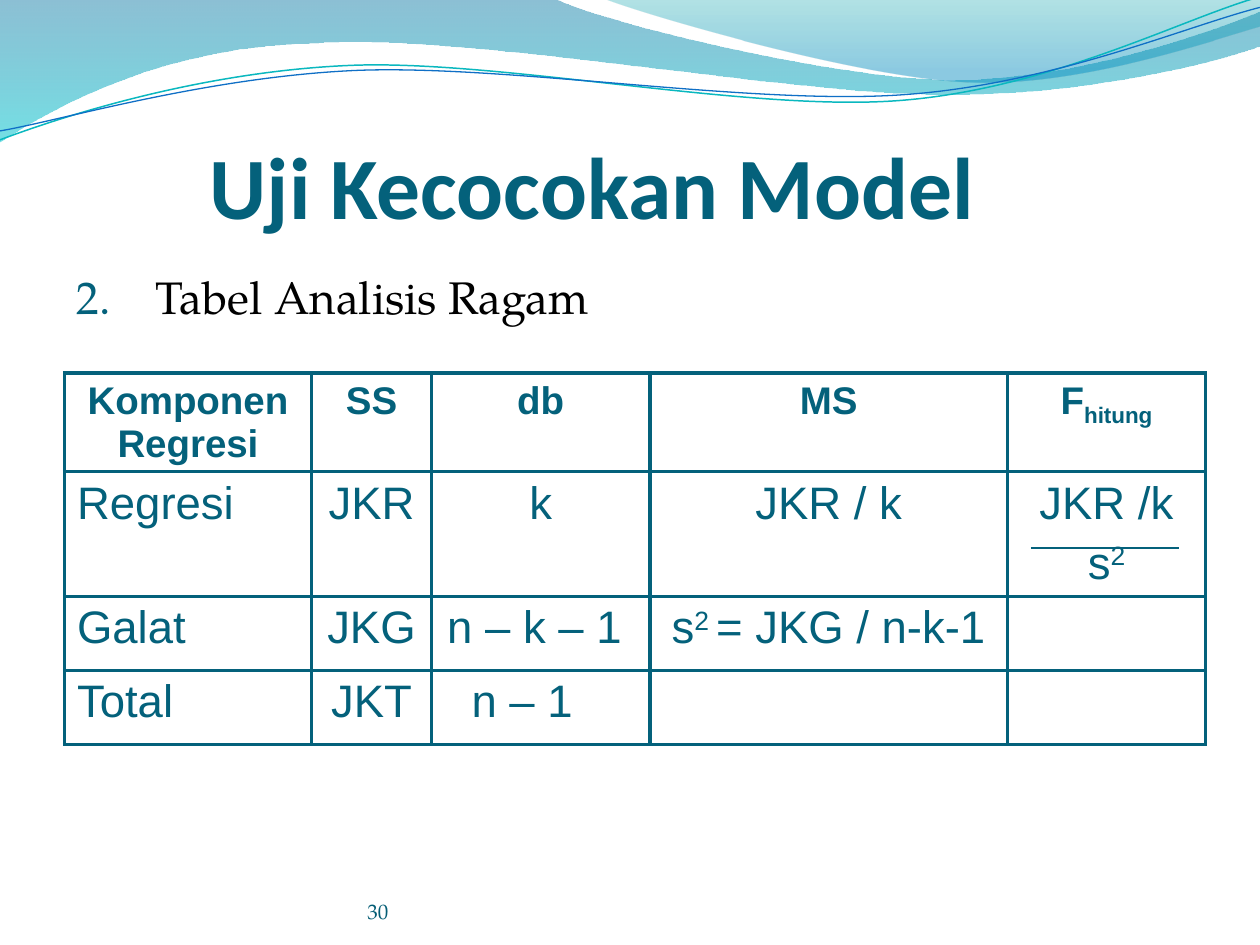
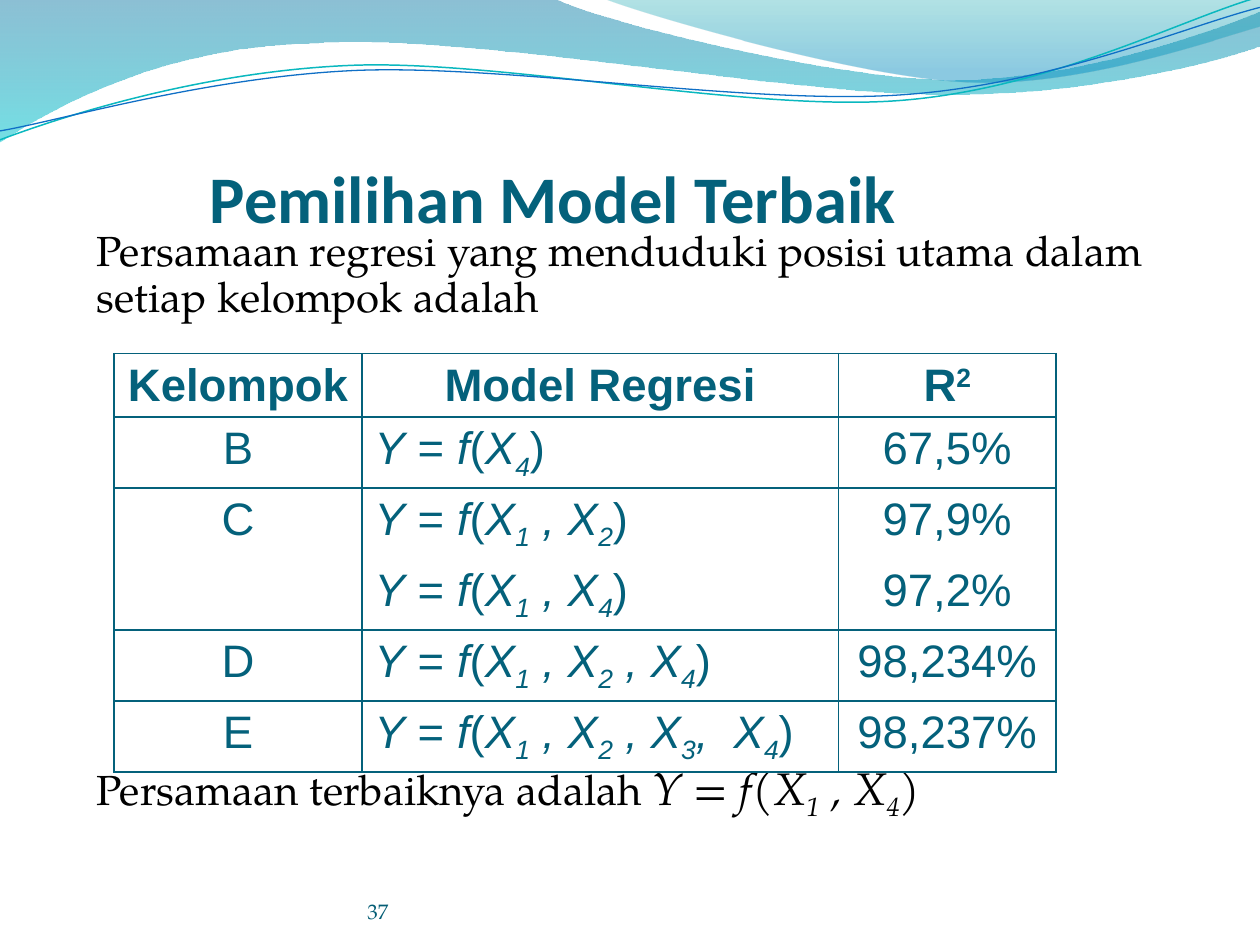
from lxml import etree
from pptx import Presentation, util as u
from pptx.dml.color import RGBColor
from pptx.enum import shapes, text
from pptx.oxml.ns import qn

Cm, Pt = u.Cm, u.Pt

# Colours and fonts
DEEP_TEAL = RGBColor(0x04, 0x61, 0x7B)
NUMBER_TEAL = RGBColor(0x04, 0x5D, 0x75)
BLACK = RGBColor(0, 0, 0)
TEAL_LINE = RGBColor(0x0A, 0xB8, 0xBF)
BLUE_LINE = RGBColor(0x0F, 0x6F, 0xC6)
HEADING_FONT, BODY_FONT, TABLE_FONT = "Calibri", "TeX Gyre Pagella", "Arial"
CENTER, LEFT, RIGHT = text.PP_ALIGN.CENTER, text.PP_ALIGN.LEFT, text.PP_ALIGN.RIGHT

# Run formats
TITLE = {"name": HEADING_FONT, "bold": True, "color": DEEP_TEAL}
BODY = {"name": BODY_FONT, "size": Pt(26), "color": BLACK}
NUMBER = {"name": BODY_FONT, "size": Pt(12), "color": NUMBER_TEAL}
CELL = {"name": TABLE_FONT, "size": Pt(26), "color": DEEP_TEAL}
ITALIC = {"italic": True}
SUB, SUPER = {"baseline": -25000}, {"baseline": 30000}

# Wave outlines in cm: a start point, then lines (2 values) or curves (6 values)
BROAD_WAVE = [
    (0, 0), (11.18, -0.03), (12.09, 0.43, 16.87, 1.6, 19.25, 1.6),
    (21.67, 1.6, 24.33, 0.66, 25.4, 0.23), (25.43, 0.91),
    (24.97, 1.12, 22.1, 1.93, 18.95, 1.9), (15.8, 1.9, 9.7, 0.71, 6.53, 0.86),
    (3.28, 0.91, 1.17, 2.11, -0.03, 2.87), (0, 0)]
RIGHT_WAVE = [
    (12.17, -0.03), (12.93, 0.28, 17.32, 1.57, 19.53, 1.65),
    (21.74, 1.75, 24.41, 0.81, 25.4, 0.53), (25.4, 0), (12.17, -0.03)]
TEAL_CURVE = [
    (0, 2.82), (1.22, 2.36, 4.01, 1.45, 7.04, 1.32),
    (10.03, 1.19, 15.06, 2.26, 18.11, 2.03), (21.16, 1.8, 23.83, 0.38, 25.35, -0.05)]
BLUE_CURVE = [
    (0, 2.64), (1.19, 2.44, 4.17, 1.55, 7.19, 1.42),
    (10.24, 1.3, 15.16, 2.13, 18.21, 1.91), (21.23, 1.7, 23.9, 0.53, 25.4, 0.15)]
# Gradient stops: position, colour, opacity in percent
BROAD_STOPS = [(0, RGBColor(0, 0x74, 0xA1), 45), (1, RGBColor(0, 0xC6, 0xCF), 55)]
RIGHT_STOPS = [(0, RGBColor(0, 0xA1, 0xA9), 30), (0.8, RGBColor(0, 0x8B, 0xBF), 45)]


def formula(*indices, last_comma=" , "):
    """Runs of Y = f(X...) with the given subscripts."""
    runs = [("Y", ITALIC), (" = ", {}), ("f", ITALIC), ("(", {})]
    for place, index in enumerate(indices):
        comma = last_comma if place == len(indices) - 1 else " , "
        runs += [((comma if place else "") + "X", ITALIC), (index, {**ITALIC, **SUB})]
    return runs + [(")", {})]


class Deck:
    def __init__(self):
        self.prs = Presentation()
        self.prs.slide_width, self.prs.slide_height = Cm(25.4), Cm(19.05)
        self.slide = None

    def new_slide(self, title, title_size, number):
        self.slide = self.prs.slides.add_slide(self.prs.slide_layouts[6])
        # Wave band
        self.wave(BROAD_WAVE, stops=BROAD_STOPS)
        self.wave(RIGHT_WAVE, stops=RIGHT_STOPS)
        self.wave(TEAL_CURVE, line=(TEAL_LINE, 0.85))
        self.wave(BLUE_CURVE, line=(BLUE_LINE, 0.75))
        # Page number and title
        bottom = {"vertical_anchor": text.MSO_ANCHOR.BOTTOM, "margin_left": 0,
                  "margin_right": 0, "margin_bottom": 0}
        number_frame = self.text_box((4.23, 17.35, 3.6, 1.27), {**bottom, "margin_top": 0})
        self.paragraph(number_frame.paragraphs[0], number, NUMBER, RIGHT)
        title_frame = self.text_box((4.23, 0.53, 19.48, 4.24), bottom)
        self.paragraph(title_frame.paragraphs[0], title, {**TITLE, "size": Pt(title_size)})

    def wave(self, outline, stops=None, line=None):
        (left, top), *segments = outline
        points = [(Cm(x), Cm(y)) for segment in segments
                  for x, y in zip(segment[::2], segment[1::2])]
        builder = self.slide.shapes.build_freeform(Cm(left), Cm(top))
        builder.add_line_segments(points, close=bool(stops))
        wave = builder.convert_to_shape()
        self.bend(wave, segments)
        wave.shadow.inherit = False
        if line:
            wave.fill.background()
            wave.line.color.rgb, wave.line.width = line[0], Pt(line[1])
            return
        wave.line.fill.background()
        wave.fill.gradient()
        wave.fill.gradient_angle = 270
        for stop, (position, color, _) in zip(wave.fill.gradient_stops, stops):
            stop.position, stop.color.rgb = position, color
        colors = list(wave._element.spPr.iter(qn("a:srgbClr")))
        for color, (_, _, opacity) in zip(colors, stops):
            etree.SubElement(color, qn("a:alpha"), val=str(opacity * 1000))

    def bend(self, wave, segments):
        """Join each three points of a curved segment into one cubic curve."""
        steps = iter(list(wave._element.spPr.iter(qn("a:lnTo"))))
        for segment in segments:
            parts = [next(steps) for _ in segment[::2]]
            if len(parts) == 3:
                curve = etree.Element(qn("a:cubicBezTo"))
                parts[0].addprevious(curve)
                for part in parts:
                    curve.append(part[0])
                    part.getparent().remove(part)

    def text_box(self, place, options=None):
        frame = self.slide.shapes.add_textbox(*map(Cm, place)).text_frame
        for key, value in {"word_wrap": True, **(options or {})}.items():
            setattr(frame, key, value)
        return frame

    def paragraph(self, para, content, style, align=LEFT, **spacing):
        for key, value in {"alignment": align, **spacing}.items():
            setattr(para, key, value)
        runs = [(content, {})] if isinstance(content, str) else content
        for words, extra in runs:
            run = para.add_run()
            run.text = words
            for key, value in {**style, **extra}.items():
                if key == "color":
                    run.font.color.rgb = value
                elif key == "baseline":
                    run._r.get_or_add_rPr().set("baseline", str(value))
                else:
                    setattr(run.font, key, value)

    def numbering(self, para, start, hanging):
        props = para._p.get_or_add_pPr()
        props.set("marL", str(hanging))
        props.set("indent", str(-hanging))
        bullet_color = etree.SubElement(props, qn("a:buClr"))
        etree.SubElement(bullet_color, qn("a:srgbClr"), val=str(DEEP_TEAL))
        etree.SubElement(props, qn("a:buAutoNum"), type="arabicPeriod", startAt=str(start))

    def table(self, corner, widths, heights, rows, border, left_column,
              header_size=26, joined_row=None):
        """Each cell holds a list of paragraphs; joined_row has no line below."""
        size = (sum(widths), sum(heights))
        grid = self.slide.shapes.add_table(
            len(rows), len(widths), *map(Cm, corner + size)).table
        grid.first_row = grid.horz_banding = False
        for column, width in zip(grid.columns, widths):
            column.width = Cm(width)
        for r, (row, height) in enumerate(zip(rows, heights)):
            grid.rows[r].height = Cm(height)
            style = CELL if r else {**CELL, "bold": True, "size": Pt(header_size)}
            open_side = {joined_row: "B"}.get(r, "T" if r - 1 == joined_row else "")
            for c, paragraphs in enumerate(row):
                cell = grid.cell(r, c)
                cell.margin_bottom = 0
                self.borders(cell, border, open_side)
                cell.fill.background()
                align = LEFT if r and c == left_column else CENTER
                for i, content in enumerate(paragraphs):
                    para = cell.text_frame.add_paragraph() if i else cell.text_frame.paragraphs[0]
                    self.paragraph(para, content, style, align, space_before=Pt(5.2 if i else 0))
        return grid

    def borders(self, cell, width, open_side):
        props = cell._tc.get_or_add_tcPr()
        for side in "LRTB":
            line = etree.SubElement(props, qn("a:ln" + side), w=str(Pt(width)))
            if side == open_side:
                etree.SubElement(line, qn("a:noFill"))
            else:
                fill = etree.SubElement(line, qn("a:solidFill"))
                etree.SubElement(fill, qn("a:srgbClr"), val=str(DEEP_TEAL))

    def rule(self, left, right, top):
        line = self.slide.shapes.add_connector(
            shapes.MSO_CONNECTOR.STRAIGHT, Cm(left), Cm(top), Cm(right), Cm(top))
        line.line.color.rgb, line.line.width = DEEP_TEAL, Pt(1.5)
        etree.SubElement(line._element.spPr, qn("a:effectLst"))


def model_fit(deck):
    deck.new_slide("Uji Kecocokan Model", 50, "30")
    heading = deck.text_box((1.3, 5.29, 21.79, 2.03)).paragraphs[0]
    deck.numbering(heading, 2, Cm(1.59))
    deck.paragraph(heading, "Tabel Analisis Ragam", BODY)

    # Analysis of variance
    s_squared = [("s", {}), ("2", SUPER)]
    error_mean = [("s", {}), ("2 ", SUPER), ("= JKG / n-k-1", {})]
    variance_rows = [
        [["Komponen Regresi"], ["SS"], ["db"], ["MS"], [[("F", {}), ("hitung", SUB)]]],
        [["Regresi"], ["JKR"], ["k"], ["JKR / k"], ["JKR /k", s_squared]],
        [["Galat"], ["JKG"], ["n – k – 1"], [error_mean], []],
        [["Total"], ["JKT"], ["n – 1"], [], []]]
    variance = deck.table((1.3, 7.52), (4.98, 2.42, 4.4, 7.21, 3.99),
                          (1.99, 2.5, 1.49, 1.5), variance_rows,
                          border=2.25, left_column=0, header_size=22)
    for row, margin in ((2, 0.5), (3, 1.0)):
        variance.cell(row, 2).margin_right = Cm(margin)
    deck.rule(20.78, 23.77, 11.05)


def best_model(deck):
    deck.new_slide("Pemilihan Model Terbaik", 38, "37")

    # Text above and below the table
    body = deck.text_box((1.7, 4.52, 21.62, 12.8))
    small = {"size": Pt(24)}
    deck.paragraph(
        body.paragraphs[0],
        "Persamaan regresi yang menduduki posisi utama dalam setiap kelompok adalah",
        {**BODY, **small}, line_spacing=0.9)
    deck.paragraph(
        body.add_paragraph(),
        [("Persamaan terbaiknya adalah ", small)] + formula("1", "4"),
        BODY, line_spacing=0.9, space_before=Pt(251))

    # Leading model of each group
    models = [
        (["B"], formula("4"), "67,5%"),
        (["C"], formula("1", "2"), "97,9%"),
        ([], formula("1", "4"), "97,2%"),
        (["D"], formula("1", "2", "4"), "98,234%"),
        (["E"], formula("1", "2", "3", "4", last_comma=",  "), "98,237%")]
    header = [["Kelompok"], ["Model Regresi"], [[("R", {}), ("2", SUPER)]]]
    model_rows = [header] + [[group, [model], [fit]] for group, model, fit in models]
    deck.table((2.3, 7.13), (5.0, 9.6, 4.39), [1.28] + [1.43] * len(models),
               model_rows, border=1, left_column=1, joined_row=2)


def main():
    deck = Deck()
    model_fit(deck)
    best_model(deck)
    deck.prs.save("out.pptx")


if __name__ == "__main__":
    main()
